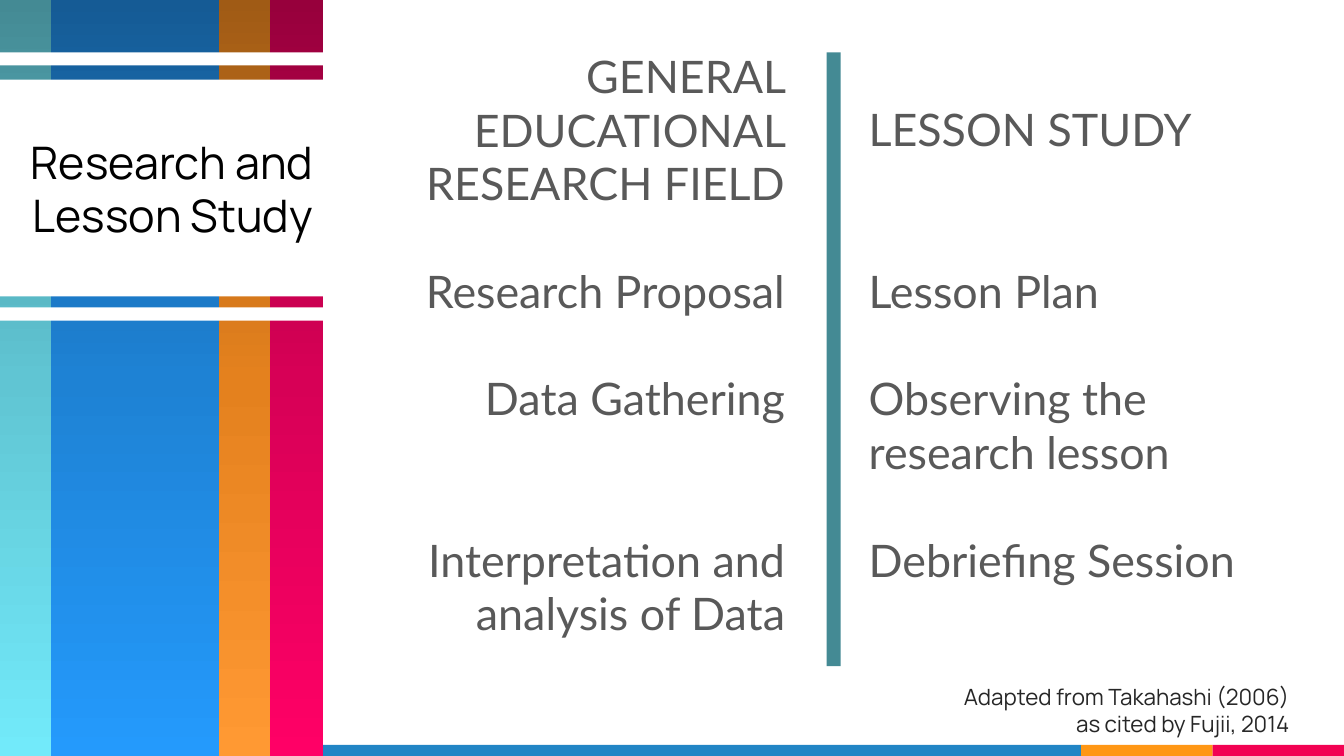
"""Build a slide that pairs general research stages with lesson study stages."""
from dataclasses import dataclass

from lxml import etree
from pptx import Presentation
from pptx.dml.color import RGBColor
from pptx.enum.shapes import MSO_SHAPE
from pptx.enum.text import MSO_ANCHOR, MSO_AUTO_SIZE, PP_ALIGN
from pptx.oxml.ns import qn
from pptx.util import Pt

RECTANGLE = MSO_SHAPE.RECTANGLE
LEFT, RIGHT = PP_ALIGN.LEFT, PP_ALIGN.RIGHT
TOP, MIDDLE, BOTTOM = MSO_ANCHOR.TOP, MSO_ANCHOR.MIDDLE, MSO_ANCHOR.BOTTOM
NO_AUTOFIT = MSO_AUTO_SIZE.NONE


@dataclass(frozen=True)
class Theme:
    white: str = "FFFFFF"
    black: str = "000000"
    body: str = "595959"
    credit: str = "262626"
    divider: str = "448A94"
    strip_blue: str = "2185C5"
    strip_orange: str = "FF9715"
    strip_red: str = "F20253"
    teal: tuple = ("448A94", "60C5D3", "72EAFA")
    blue: tuple = ("155B95", "1E82D4", "249AFC")
    orange: tuple = ("A05B15", "E4811E", "FF9933")
    pink: tuple = ("97003C", "D70056", "FF0066")
    heading_font: str = "Manrope"
    body_font: str = "Lato"
    large: int = 32
    small: int = 16
    line: float = 38.4


theme = Theme()


def add_block(page, left, top, width, height, color):
    block = page.shapes.add_shape(RECTANGLE, Pt(left), Pt(top), Pt(width), Pt(height))
    block.shadow.inherit = False
    block.line.fill.background()
    block.fill.solid()
    block.fill.fore_color.rgb = RGBColor.from_string(color)
    return block


def write(box, rows, align, anchor, font, size, color):
    frame = box.text_frame
    frame.word_wrap = True
    frame.auto_size = NO_AUTOFIT
    frame.vertical_anchor = anchor
    frame.margin_left = frame.margin_right = Pt(7.2)
    frame.margin_top = frame.margin_bottom = Pt(7.2)
    for index, (gap_lines, text) in enumerate(rows):
        para = frame.add_paragraph() if index else frame.paragraphs[0]
        para.text = text
        para.alignment = align
        para.space_before = Pt(gap_lines * theme.line)
        para.font.name = font
        para.font.size = Pt(size)
        para.font.color.rgb = RGBColor.from_string(color)


deck = Presentation()
deck.slide_width, deck.slide_height = Pt(960), Pt(540)
page = deck.slides.add_slide(deck.slide_layouts[5])

for left, width, color in (
    (93.6, 678.6, theme.strip_blue),
    (772.2, 93.9, theme.strip_orange),
    (866.1, 93.9, theme.strip_red),
):
    add_block(page, left, 532, width, 8, color)

for left, width, colors in (
    (36.5, 120, theme.blue),
    (156.5, 36.5, theme.orange),
    (193, 38.1, theme.pink),
    (0, 36.5, theme.teal),
):
    bar = add_block(page, left, 0, width, 540, colors[0])
    bar.fill.gradient()
    bar.fill.gradient_angle = 270
    stops = next(bar.element.iter(qn("a:gsLst")))
    stops.clear()
    for step, color in enumerate(colors):
        stop = etree.SubElement(stops, qn("a:gs"), pos=str(step * 50000))
        etree.SubElement(stop, qn("a:srgbClr"), val=color)

title = page.shapes.title
title.element.getparent().append(title.element)
title.left, title.top, title.width, title.height = Pt(0), Pt(56.9), Pt(231.1), Pt(154.8)
title.fill.solid()
title.fill.fore_color.rgb = RGBColor.from_string(theme.white)
write(title, [(0, "Research and Lesson Study")], RIGHT, MIDDLE,
      theme.heading_font, theme.large, theme.black)

for top in (37.4, 219.6):
    add_block(page, 0, top, 231.1, 9.4, theme.white)
add_block(page, 590.4, 37.4, 10.1, 438.5, theme.divider)

research_rows = (
    (0, "GENERAL EDUCATIONAL RESEARCH FIELD"),
    (1, "Research Proposal"),
    (1, "Data Gathering"),
    (2, "Interpretation and analysis of Data"),
)
lesson_rows = (
    (0, "LESSON STUDY"),
    (2, "Lesson Plan"),
    (1, "Observing the research lesson"),
    (1, "Debriefing Session"),
)
for left, first_line, rows, align in (
    (253.4, 0, research_rows, RIGHT),
    (613.4, 1, lesson_rows, LEFT),
):
    offset = first_line * theme.line
    column = page.shapes.add_textbox(
        Pt(left), Pt(27.4 + offset), Pt(314.6), Pt(445 - offset))
    write(column, rows, align, TOP, theme.body_font, theme.large, theme.body)

credit = page.shapes.add_textbox(Pt(553), Pt(480.2), Pt(375.1), Pt(53.3))
write(credit, [(0, "Adapted from Takahashi (2006)"), (0, "as cited by Fujii, 2014")],
      RIGHT, BOTTOM, theme.heading_font, theme.small, theme.credit)

deck.save("out.pptx")
